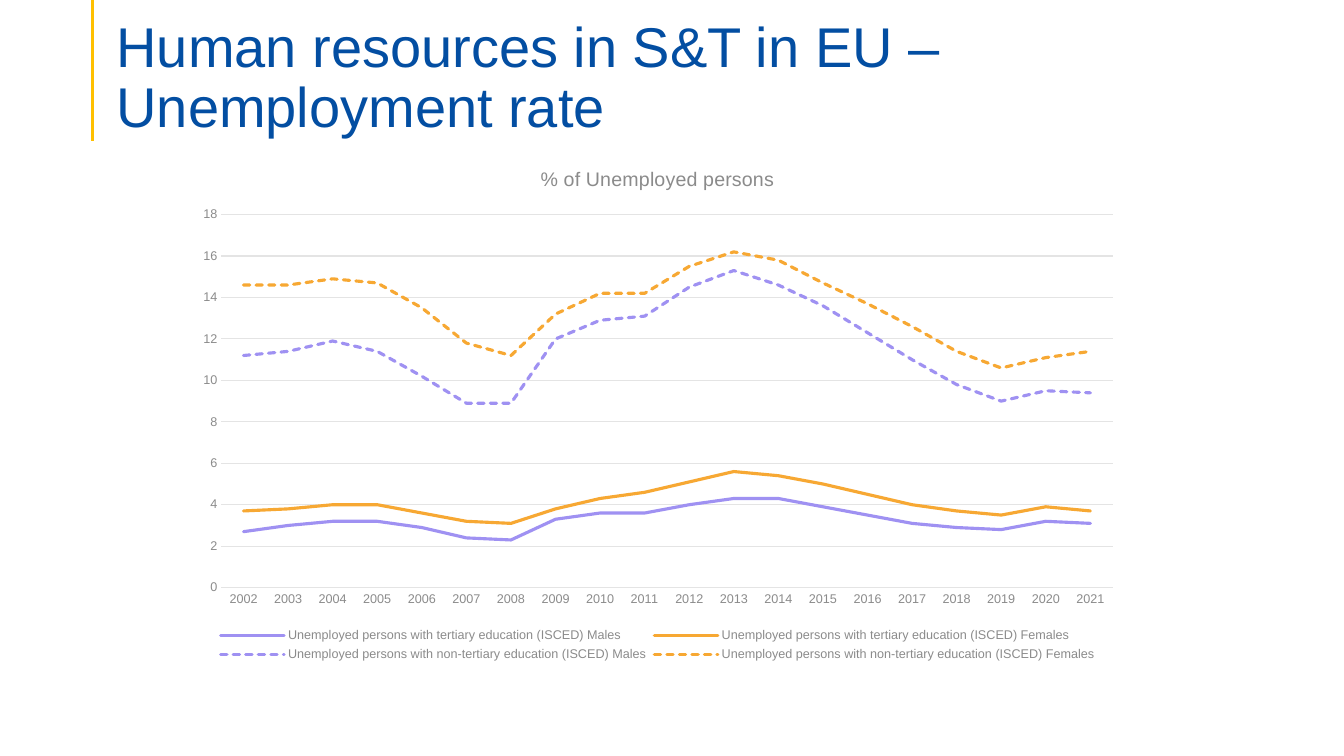
from lxml import etree
from pptx import Presentation
from pptx import util as u
from pptx.chart import data as cd
from pptx.dml.color import RGBColor
from pptx.enum import chart as ch, dml, shapes, text
from pptx.oxml import parse_xml
from pptx.oxml.ns import nsdecls, qn

BLUE = RGBColor(0x03, 0x4E, 0xA2)
GOLD = RGBColor(0xFF, 0xC0, 0x00)
GREY = RGBColor(0x8B, 0x8B, 0x8B)
PALE = RGBColor(0xE4, 0xE4, 0xE4)
LILAC = RGBColor(0x9F, 0x91, 0xF2)
AMBER = RGBColor(0xF7, 0xA8, 0x33)
FONT = "Arial"


def write(frame, words, size, color, space=None):
    """Put one paragraph of formatted text in a frame."""
    para = frame.paragraphs[0]
    para.line_spacing = space
    run = para.add_run()
    run.text = words
    style(run.font, size, color)


def style(font, size, color):
    font.name, font.size, font.bold = FONT, u.Pt(size), False
    font.color.rgb = color


prs = Presentation()
prs.slide_width, prs.slide_height = u.Cm(33.87), u.Cm(19.05)
slide = prs.slides.add_slide(prs.slide_layouts[6])

# Gold rule beside the title
rule = slide.shapes.add_connector(
    shapes.MSO_CONNECTOR.STRAIGHT, u.Cm(2.34), 0, u.Cm(2.34), u.Cm(3.56))
rule.line.color.rgb = GOLD
rule.line.width = u.Pt(2.25)
etree.SubElement(rule._element.spPr, qn("a:effectLst"))

# Title
box = slide.shapes.add_textbox(u.Cm(2.69), u.Cm(1.35), u.Cm(30.2), u.Cm(2.18))
frame = box.text_frame
frame.word_wrap = True
frame.vertical_anchor = text.MSO_ANCHOR.BOTTOM
frame.margin_bottom = 0
write(frame, "Human resources in S&T in EU – Unemployment rate",
      size=40, color=BLUE, space=0.9)

# Chart data: level, sex, colour, dash, rates
SOLID, DASH = dml.MSO_LINE.SOLID, dml.MSO_LINE.SQUARE_DOT
rates = [
    ("tertiary", "Males", LILAC, SOLID,
     [2.7, 3, 3.2, 3.2, 2.9, 2.4, 2.3, 3.3, 3.6, 3.6,
      4, 4.3, 4.3, 3.9, 3.5, 3.1, 2.9, 2.8, 3.2, 3.1]),
    ("tertiary", "Females", AMBER, SOLID,
     [3.7, 3.8, 4, 4, 3.6, 3.2, 3.1, 3.8, 4.3, 4.6,
      5.1, 5.6, 5.4, 5, 4.5, 4, 3.7, 3.5, 3.9, 3.7]),
    ("non-tertiary", "Males", LILAC, DASH,
     [11.2, 11.4, 11.9, 11.4, 10.2, 8.9, 8.9, 12, 12.9, 13.1,
      14.5, 15.3, 14.6, 13.6, 12.3, 11, 9.8, 9, 9.5, 9.4]),
    ("non-tertiary", "Females", AMBER, DASH,
     [14.6, 14.6, 14.9, 14.7, 13.5, 11.8, 11.2, 13.2, 14.2, 14.2,
      15.5, 16.2, 15.8, 14.7, 13.7, 12.6, 11.4, 10.6, 11.1, 11.4]),
]
data = cd.CategoryChartData(number_format="0.0")
data.categories = [str(year) for year in range(2002, 2022)]
for level, sex, _, _, vals in rates:
    data.add_series(
        f"Unemployed persons with {level} education (ISCED) {sex}", vals)

# Chart
chart = slide.shapes.add_chart(
    ch.XL_CHART_TYPE.LINE, u.Cm(4.62), u.Cm(3.71), u.Cm(23.9), u.Cm(13.06),
    data).chart
style(chart.font, 10, GREY)
chart.has_title = True
write(chart.chart_title.text_frame, "% of Unemployed persons",
      size=14, color=GREY)
chart.chart_title.include_in_layout = False
chart.has_legend = True
chart.legend.position = ch.XL_LEGEND_POSITION.BOTTOM
chart.legend.include_in_layout = False
style(chart.legend.font, 9, GREY)

# Series lines
plot = chart.plots[0]
plot.vary_by_categories = False
for series, (_, _, color, dash, _) in zip(plot.series, rates):
    series.smooth = False
    series.marker.style = ch.XL_MARKER_STYLE.NONE
    line = series.format.line
    line.color.rgb = color
    line.width = u.Pt(2.25)
    line.dash_style = dash
    for ln in series._element.xpath("c:spPr/a:ln"):
        ln.set("cap", "rnd")

# Axes
years, scale = chart.category_axis, chart.value_axis
for axis in (years, scale):
    style(axis.tick_labels.font, 9, GREY)
    axis.major_tick_mark = axis.minor_tick_mark = ch.XL_TICK_MARK.NONE
scale.minimum_scale, scale.maximum_scale, scale.major_unit = 0, 18, 2
scale.tick_labels.number_format = "0"
scale.tick_labels.number_format_is_linked = False
scale.format.line.fill.background()
scale.has_major_gridlines = True
for line in (years.format.line, scale.major_gridlines.format.line):
    line.color.rgb = PALE
    line.width = u.Pt(0.75)

# Plot area inside the chart, as shares of its size
area = chart._chartSpace.chart.plotArea
for old in area.findall(qn("c:layout")):
    area.remove(old)
spots = "".join(f'<c:{key} val="{val}"/>' for key, val in
                dict(x=0.04, y=0.13, w=0.94, h=0.72).items())
area.insert(0, parse_xml(
    f'<c:layout {nsdecls("c")}><c:manualLayout><c:layoutTarget val="inner"/>'
    f'<c:xMode val="edge"/><c:yMode val="edge"/>{spots}'
    '</c:manualLayout></c:layout>'))

prs.save("out.pptx")
